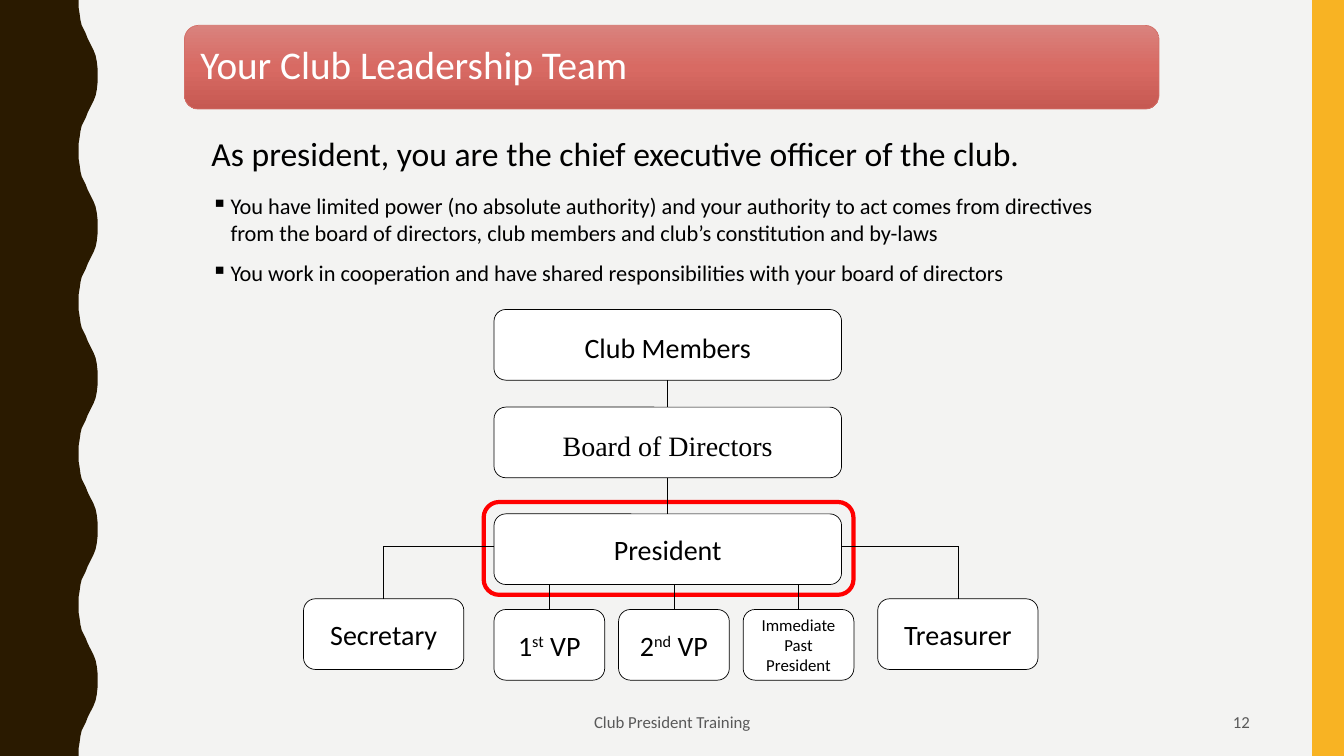
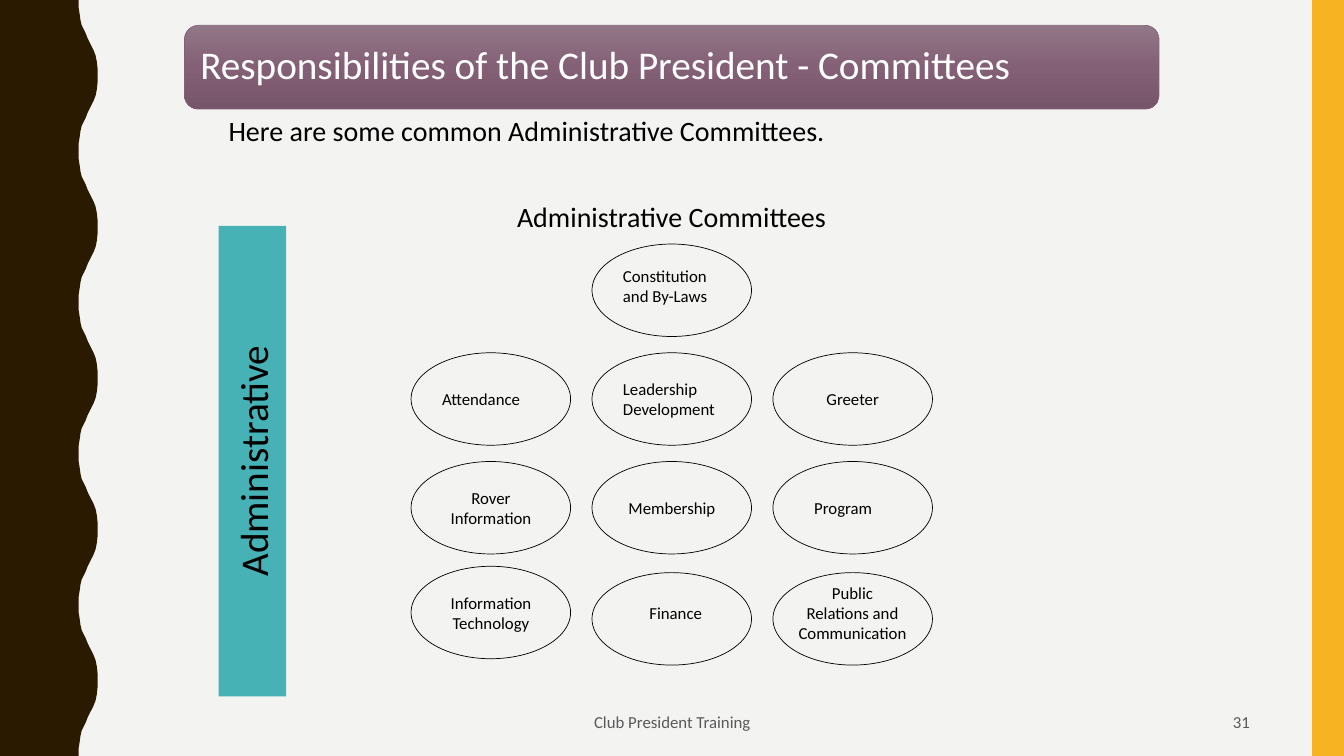
from copy import deepcopy
from dataclasses import dataclass
from typing import Any

from lxml import etree
from pptx import Presentation
from pptx.dml.color import RGBColor
from pptx.enum.shapes import MSO_CONNECTOR, MSO_SHAPE
from pptx.enum.text import MSO_ANCHOR, MSO_AUTO_SIZE, PP_ALIGN
from pptx.oxml.ns import qn
from pptx.util import Cm, Pt

LEFT, CENTER, RIGHT = PP_ALIGN.LEFT, PP_ALIGN.CENTER, PP_ALIGN.RIGHT
TOP, MIDDLE = MSO_ANCHOR.TOP, MSO_ANCHOR.MIDDLE
RECTANGLE, ROUNDED, ELLIPSE = MSO_SHAPE.RECTANGLE, MSO_SHAPE.ROUNDED_RECTANGLE, MSO_SHAPE.OVAL
STRAIGHT = MSO_CONNECTOR.STRAIGHT
NO_AUTOFIT = MSO_AUTO_SIZE.NONE

BLACK, WHITE, GREY = "000000", "FFFFFF", "595959"
BROWN, GOLD, PAPER = "2A1A00", "F8B323", "F3F3F2"
RED, TEAL = "FF0000", "46B2B5"
BODY_FONT, SERIF_FONT = "Calibri", "Times New Roman"
FOOTER = "Club President Training"

SLIDE_WIDTH, SLIDE_HEIGHT = 33.87, 19.05
WAVE_PERIOD, WAVE_COUNT = 3.81, 5
HALF_WAVE = [
    (1.98, 0), (1.98, 0.18), (2.01, 0.36), (2.03, 0.51), (2.06, 0.64),
    (2.11, 0.74), (2.16, 0.84), (2.21, 0.97), (2.26, 1.07), (2.31, 1.17),
    (2.36, 1.27), (2.41, 1.4), (2.44, 1.55), (2.46, 1.73), (2.46, 1.91),
]


@dataclass(frozen=True)
class Area:
    """A rectangle in centimetres."""
    left: float
    top: float
    width: float
    height: float

    def lengths(self) -> tuple:
        return Cm(self.left), Cm(self.top), Cm(self.width), Cm(self.height)


@dataclass(frozen=True)
class Banner:
    title: str
    gradient: tuple[str, str, str]
    outline: str
    number: str


@dataclass(frozen=True)
class Role:
    label: str
    area: Area
    size: float = 20
    font: str = BODY_FONT
    spacing: float = 1.0


@dataclass(frozen=True)
class Committee:
    """A grid cell; the label's offset is measured from its ellipse."""
    label: str
    column: int
    row: int
    left: float = 0.53
    top: float = 0.79
    width: float = 2.97
    align: Any = CENTER
    lift: float = 0


TITLE_AREA = Area(4.75, 0.74, 24.36, 1.91)
BANNER_AREA = Area(4.65, 0.64, 24.56, 2.11)
TEAM = Banner("Your Club Leadership Team", ("D9827D", "D86A63", "C65952"), "D36F68", "12")
COMMITTEES = Banner("Responsibilities of the Club President - Committees",
                    ("917787", "846076", "76546A"), "826276", "31")

INTRODUCTION = "As president, you are the chief executive officer of the club."
DUTIES = [
    ("You have limited power (no absolute authority) and your authority to act comes from "
     "directives from the board of directors, club members and club’s constitution and by-laws",
     13.5),
    ("You work in cooperation and have shared responsibilities with your board of directors", 9.5),
]

CHAIN_LEFT, CHAIN_WIDTH, BOX_HEIGHT = 12.45, 8.76, 1.78
CHAIN_RIGHT, CHAIN_CENTER = CHAIN_LEFT + CHAIN_WIDTH, CHAIN_LEFT + CHAIN_WIDTH / 2
MEMBERS_TOP, BOARD_TOP, PRESIDENT_TOP = 7.8, 10.26, 12.95
DEPUTY_TOP, DEPUTY_WIDTH, DEPUTY_PITCH = 15.36, 2.79, 3.14
OFFICER_TOP, OFFICER_WIDTH, BRANCH_Y = 15.09, 4.04, 13.77
CHAIN = [
    Role("Club Members", Area(CHAIN_LEFT, MEMBERS_TOP, CHAIN_WIDTH, BOX_HEIGHT), spacing=1.15),
    Role("Board of Directors", Area(CHAIN_LEFT, BOARD_TOP, CHAIN_WIDTH, BOX_HEIGHT),
         font=SERIF_FONT, spacing=1.15),
    Role("President", Area(CHAIN_LEFT, PRESIDENT_TOP, CHAIN_WIDTH, BOX_HEIGHT)),
]
DEPUTIES = [
    Role(label, Area(CHAIN_LEFT + index * DEPUTY_PITCH, DEPUTY_TOP, DEPUTY_WIDTH, BOX_HEIGHT), size)
    for index, (label, size) in enumerate(
        [("1^st^ VP", 20), ("2^nd^ VP", 20), ("Immediate Past President", 12)])
]
OFFICERS = [
    (Role("Secretary", Area(7.65, OFFICER_TOP, OFFICER_WIDTH, BOX_HEIGHT)), CHAIN_LEFT),
    (Role("Treasurer", Area(22.12, OFFICER_TOP, OFFICER_WIDTH, BOX_HEIGHT)), CHAIN_RIGHT),
]

ELLIPSE_WIDTH, ELLIPSE_HEIGHT = 4.02, 2.33
GRID_LEFT, COLUMN_PITCH = 10.36, 4.56
ROW_TOPS = (6.15, 8.89, 11.63, 14.43)
COMMITTEE_GRID = [
    Committee("Constitution and By-Laws", 1, 0, top=0.41, align=LEFT),
    Committee("Attendance", 0, 1, align=LEFT),
    Committee("Leadership Development", 1, 1, top=0.53, width=3.18, align=LEFT),
    Committee("Greeter", 2, 1, left=0.79, width=2.44),
    Committee("Rover Information", 0, 2, top=0.53),
    Committee("Membership", 1, 2),
    Committee("Program", 2, 2, left=0.79, width=2.44, align=LEFT),
    Committee("Information Technology", 0, 3, top=0.53, lift=0.16),
    Committee("Finance", 1, 3, left=0.84, top=0.64, width=2.54),
    Committee("Public\nRelations and\nCommunication", 2, 3, left=0.2, top=0.13, width=3.61),
]


def color(value: str) -> RGBColor:
    return RGBColor.from_string(value)


def apply_format(target: Any, values: dict[str, Any]) -> None:
    for name, value in values.items():
        setattr(target, name, value)


def write_paragraph(paragraph: Any, text: str, size: float, ink: str = BLACK,
                    font: str = BODY_FONT, **layout: Any) -> None:
    """Write one paragraph; text between ^ marks is superscript."""
    apply_format(paragraph, layout)
    for index, part in enumerate(text.split("^")):
        run = paragraph.add_run()
        run.text = part
        apply_format(run.font, {"size": Pt(size), "name": font, "bold": False})
        run.font.color.rgb = color(ink)
        if index % 2:
            run._r.get_or_add_rPr().set("baseline", "30000")


def write_text(shape: Any, text: str, size: float, anchor: Any = TOP, **style: Any) -> None:
    frame = shape.text_frame
    apply_format(frame, {"word_wrap": True, "auto_size": NO_AUTOFIT, "vertical_anchor": anchor})
    for index, line in enumerate(text.split("\n")):
        paragraph = frame.add_paragraph() if index else frame.paragraphs[0]
        write_paragraph(paragraph, line, size, **style)


def add_text(slide: Any, area: Area, text: str, size: float, **style: Any) -> Any:
    box = slide.shapes.add_textbox(*area.lengths())
    write_text(box, text, size, **style)
    return box


def paint(shape: Any, fill: str | None, outline: str | None, width: float = 0.5) -> None:
    shape.shadow.inherit = False
    if fill:
        shape.fill.solid()
        shape.fill.fore_color.rgb = color(fill)
    else:
        shape.fill.background()
    if outline:
        shape.line.color.rgb = color(outline)
        shape.line.width = Pt(width)
    else:
        shape.line.fill.background()


def add_shape(slide: Any, kind: Any, area: Area, fill: str | None = None,
              outline: str | None = None, width: float = 0.5) -> Any:
    shape = slide.shapes.add_shape(kind, *area.lengths())
    paint(shape, fill, outline, width)
    return shape


def add_line(slide: Any, start: tuple[float, float], end: tuple[float, float],
             width: float = 0.5) -> None:
    line = slide.shapes.add_connector(STRAIGHT, *(Cm(value) for value in start + end))
    line.line.color.rgb = color(BLACK)
    line.line.width = Pt(width)
    etree.SubElement(line.element.find(qn("p:spPr")), qn("a:effectLst"))


def add_wave(slide: Any) -> None:
    wave = HALF_WAVE + [(x, WAVE_PERIOD - y) for x, y in reversed(HALF_WAVE[:-1])]
    edge = [(x, y + index * WAVE_PERIOD) for index in range(WAVE_COUNT) for x, y in wave]
    builder = slide.shapes.build_freeform(0, 0)
    builder.add_line_segments([(Cm(x), Cm(y)) for x, y in edge + [(0, SLIDE_HEIGHT)]])
    paint(builder.convert_to_shape(), BROWN, None)


def fill_gradient(shape: Any, stops: tuple[str, str, str]) -> None:
    """Fill from top to bottom with three evenly spaced colours."""
    shape.fill.gradient()
    shape.fill.gradient_angle = 270
    first = shape.element.find(".//" + qn("a:gs"))
    first.addnext(deepcopy(first))
    for index, (stop, value) in enumerate(zip(shape.fill.gradient_stops, stops)):
        stop.position = index / 2
        stop.color.rgb = color(value)


def add_base_slide(presentation: Any, banner: Banner) -> Any:
    """Add a slide with the side bands, title banner and footer."""
    slide = presentation.slides.add_slide(presentation.slide_layouts.get_by_name("Title Only"))
    add_wave(slide)
    add_shape(slide, RECTANGLE, Area(33.07, 0, 0.8, SLIDE_HEIGHT), GOLD)
    plate = add_shape(slide, ROUNDED, BANNER_AREA, outline=banner.outline)
    fill_gradient(plate, banner.gradient)

    title = slide.shapes.title
    apply_format(title, dict(zip(("left", "top", "width", "height"), TITLE_AREA.lengths())))
    sides = ("left", "top", "right", "bottom")
    apply_format(title.text_frame, {f"margin_{side}": Cm(0.3) for side in sides})
    write_text(title, banner.title, 28, MIDDLE, ink=WHITE, alignment=LEFT, line_spacing=0.9)
    plate.element.addnext(title.element)

    add_text(slide, Area(11.23, 17.7, 11.43, 0.97), FOOTER, 12,
             anchor=MIDDLE, ink=GREY, alignment=CENTER)
    add_text(slide, Area(23.93, 17.7, 7.82, 0.97), banner.number, 12,
             anchor=MIDDLE, ink=GREY, alignment=RIGHT)
    return slide


def add_bullet(frame: Any, text: str, gap: float) -> None:
    paragraph = frame.add_paragraph()
    write_paragraph(paragraph, text, 16, space_before=Pt(gap))
    properties = paragraph._p.get_or_add_pPr()
    properties.set("marL", str(Cm(0.48)))
    properties.set("indent", str(-Cm(0.48)))
    etree.SubElement(properties, qn("a:buChar")).set("char", "▪")


def add_role(slide: Any, role: Role) -> None:
    box = add_shape(slide, ROUNDED, role.area, WHITE, BLACK)
    write_text(box, role.label, role.size, MIDDLE, font=role.font,
               alignment=CENTER, line_spacing=role.spacing)


def build_team_slide(presentation: Any) -> None:
    slide = add_base_slide(presentation, TEAM)
    introduction = add_text(slide, Area(5.08, 3.23, 23.85, 5.41), INTRODUCTION, 24)
    for text, gap in DUTIES:
        add_bullet(introduction.text_frame, text, gap)

    add_shape(slide, ROUNDED, Area(12.19, 12.65, 9.32, 2.34), outline=RED, width=3)
    for role in CHAIN + DEPUTIES + [officer for officer, _ in OFFICERS]:
        add_role(slide, role)
    for upper, lower in zip(CHAIN, CHAIN[1:]):
        add_line(slide, (CHAIN_CENTER, upper.area.top + BOX_HEIGHT),
                 (CHAIN_CENTER, lower.area.top), 1)
    for deputy in DEPUTIES:
        middle = deputy.area.left + DEPUTY_WIDTH / 2
        add_line(slide, (middle, PRESIDENT_TOP + BOX_HEIGHT), (middle, DEPUTY_TOP))
    for officer, chain_side in OFFICERS:
        middle = officer.area.left + OFFICER_WIDTH / 2
        add_line(slide, (chain_side, BRANCH_Y), (middle, BRANCH_Y))
        add_line(slide, (middle, BRANCH_Y), (middle, OFFICER_TOP))


def build_committee_slide(presentation: Any) -> None:
    slide = add_base_slide(presentation, COMMITTEES)
    add_text(slide, Area(5.51, 2.74, 22.86, 1.12),
             "Here are some common Administrative Committees.", 20)
    side_label = add_shape(slide, RECTANGLE, Area(5.51, 5.69, 1.7, 11.86), TEAL)
    write_text(side_label, "Administrative", 28, MIDDLE, alignment=CENTER)
    side_label.element.find(".//" + qn("a:bodyPr")).set("vert", "vert270")
    add_text(slide, Area(GRID_LEFT, 4.9, 13.13, 1.12), "Administrative Committees", 20,
             alignment=CENTER)
    for committee in COMMITTEE_GRID:
        left = GRID_LEFT + committee.column * COLUMN_PITCH
        top = ROW_TOPS[committee.row] - committee.lift
        add_shape(slide, ELLIPSE, Area(left, top, ELLIPSE_WIDTH, ELLIPSE_HEIGHT), outline=BLACK)
        add_text(slide, Area(left + committee.left, top + committee.top, committee.width, 1.27),
                 committee.label, 12, alignment=committee.align)


def main() -> None:
    presentation = Presentation()
    presentation.slide_width, presentation.slide_height = Cm(SLIDE_WIDTH), Cm(SLIDE_HEIGHT)
    background = presentation.slide_master.background.fill
    background.solid()
    background.fore_color.rgb = color(PAPER)
    build_team_slide(presentation)
    build_committee_slide(presentation)
    presentation.save("out.pptx")


if __name__ == "__main__":
    main()
